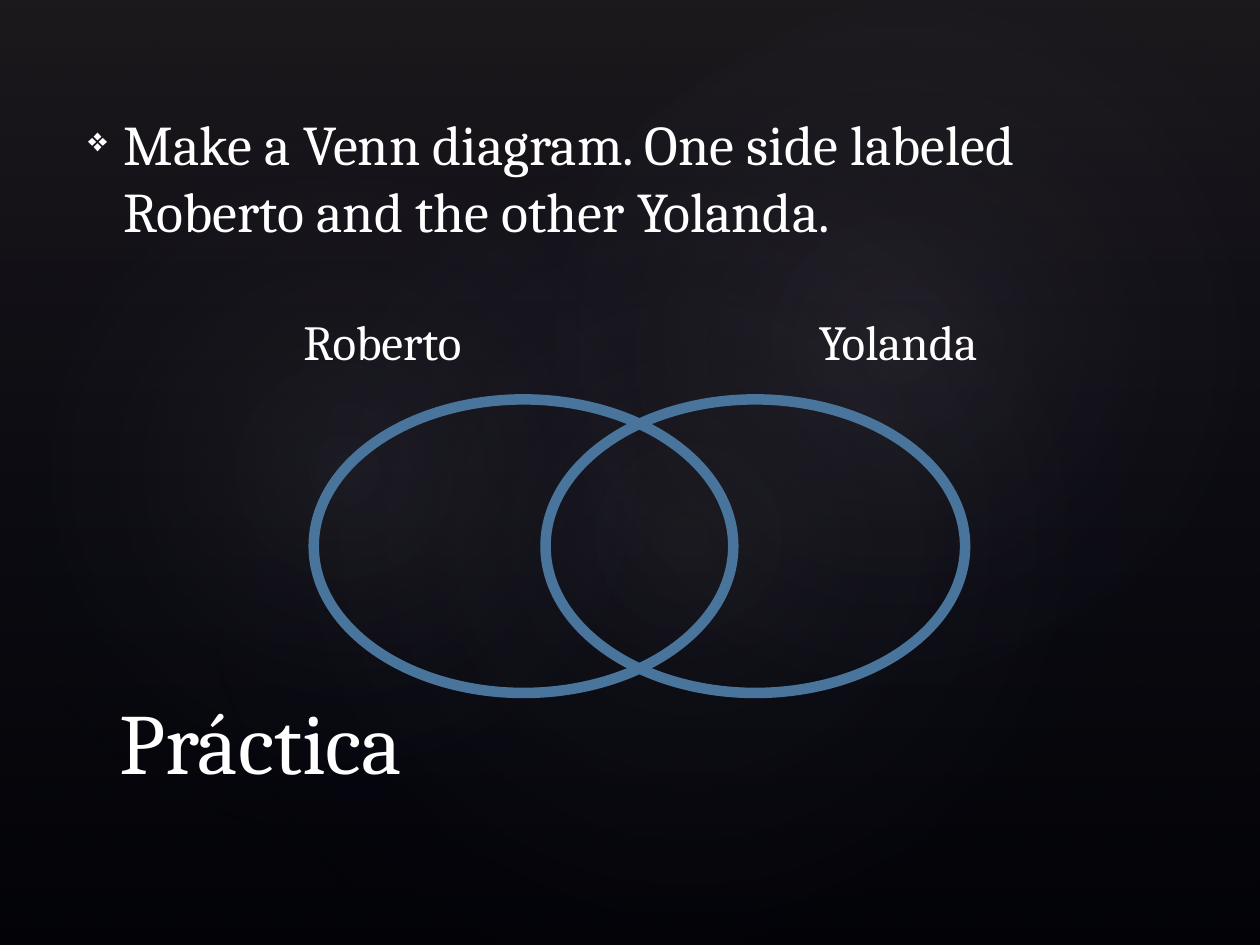
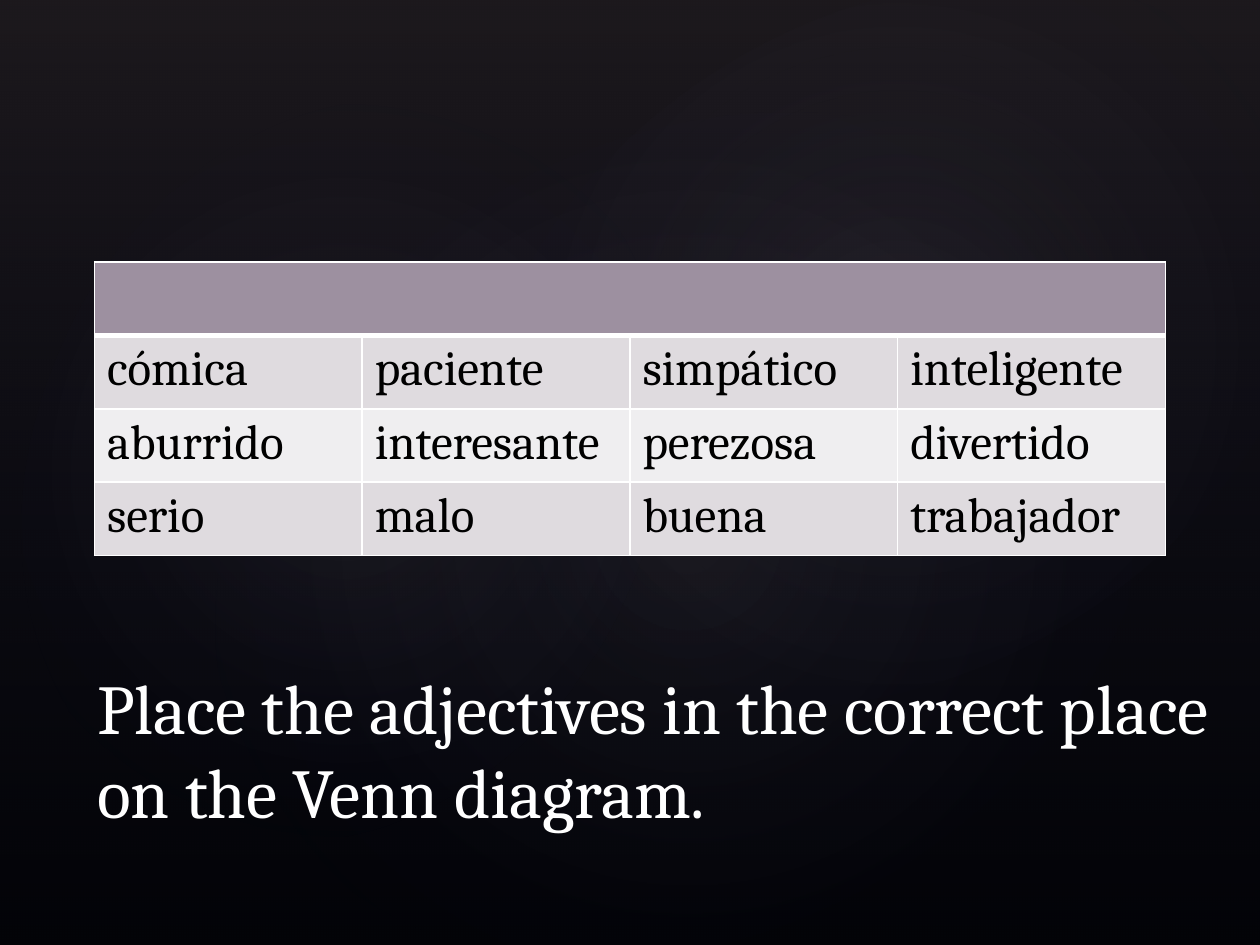
import dataclasses
import itertools

import lxml.etree
import pptx
import pptx.dml.color
import pptx.enum.shapes
import pptx.enum.text
import pptx.oxml.ns
import pptx.util

Inches = pptx.util.Inches
Pt = pptx.util.Pt
qn = pptx.oxml.ns.qn
SHAPES = pptx.enum.shapes.MSO_SHAPE
ANCHOR = pptx.enum.text.MSO_ANCHOR
AUTO_SIZE = pptx.enum.text.MSO_AUTO_SIZE


@dataclasses.dataclass(frozen=True)
class Theme:
    font: str = "Cambria"
    background: str = "000000"
    light_text: str = "FFFFFF"
    dark_text: str = "000000"
    veil_top: str = "504652"
    veil_bottom: str = "242852"
    glow: str = "C4BCC6"
    ring: str = "49749B"
    grid: str = "FFFFFF"
    header: str = "9D90A0"
    bands: tuple = ("DFDBDF", "EFEEF0")
    title_size: int = 49
    long_title_size: int = 40
    body_size: int = 32
    label_size: int = 28


def rgb(value):
    return pptx.dml.color.RGBColor.from_string(value)


def add_xml(parent, tag, **attributes):
    values = {name: str(value) for name, value in attributes.items()}
    return lxml.etree.SubElement(parent, qn(tag), values)


class Deck:
    def __init__(self, theme):
        self.theme = theme
        self.presentation = pptx.Presentation()
        self.presentation.slide_width = Inches(10)
        self.presentation.slide_height = Inches(7.5)
        self.layout = self.presentation.slide_layouts[5]  # title only
        self.slide = None

    # Slides and shared backdrop
    def start_slide(self):
        self.slide = self.presentation.slides.add_slide(self.layout)

    def move_to_layout(self, shape):
        self.layout.element.cSld.spTree.append(shape.element)

    def backdrop(self):
        """Draw the dark veil and the soft glows once, on the layout."""
        theme = self.theme
        fill = self.layout.background.fill
        fill.solid()
        fill.fore_color.rgb = rgb(theme.background)
        veil = self.shape(SHAPES.RECTANGLE, 0, 0, 10, 7.5)
        self.gradient(veil, [(0, theme.veil_top, 36), (100, theme.veil_bottom, 10)])
        self.move_to_layout(veil)
        glows = [
            (1.5, 1.14, 7.92, 6.24, 328.7, 7),
            (-0.3, 1.28, 6.06, 4.9, 294.3, 8),
            (3.58, 0.13, 7.09, 5.2, 328.7, 8),
        ]
        for left, top, width, height, rotation, opacity in glows:
            glow = self.shape(SHAPES.OVAL, left, top, width, height)
            glow.rotation = rotation
            stops = [(0, theme.glow, opacity), (58, theme.veil_bottom, 0)]
            self.gradient(glow, stops, radial=True)
            self.move_to_layout(glow)

    # Shapes
    def shape(self, kind, left, top, width, height):
        shape = self.slide.shapes.add_shape(
            kind, Inches(left), Inches(top), Inches(width), Inches(height))
        shape.shadow.inherit = False
        shape.fill.background()
        shape.line.fill.background()
        return shape

    def gradient(self, shape, stops, radial=False):
        properties = shape.element.spPr
        gradient = lxml.etree.Element(qn("a:gradFill"), rotWithShape="1")
        stop_list = add_xml(gradient, "a:gsLst")
        for position, color, opacity in stops:
            stop = add_xml(stop_list, "a:gs", pos=position * 1000)
            color_element = add_xml(stop, "a:srgbClr", val=color)
            add_xml(color_element, "a:alpha", val=opacity * 1000)
        if radial:
            circle = add_xml(gradient, "a:path", path="circle")
            add_xml(circle, "a:fillToRect", l=50000, t=50000, r=50000, b=50000)
        else:
            add_xml(gradient, "a:lin", ang=90 * 60000, scaled=0)
        properties.replace(properties.find(qn("a:noFill")), gradient)

    def ring(self, left, top, width, height):
        ring = self.shape(SHAPES.OVAL, left, top, width, height)
        ring.line.color.rgb = rgb(self.theme.ring)
        ring.line.width = Pt(6)

    # Text
    def fill_text(self, frame, text, size, color):
        paragraph = frame.paragraphs[0]
        paragraph.alignment = pptx.enum.text.PP_ALIGN.LEFT
        run = paragraph.add_run()
        run.text = text
        run.font.name = self.theme.font
        run.font.size = Pt(size)
        run.font.color.rgb = rgb(color)
        return paragraph

    def title(self, text, size, left, top, width, height):
        title = self.slide.shapes.title
        title.left, title.top = Inches(left), Inches(top)
        title.width, title.height = Inches(width), Inches(height)
        frame = title.text_frame
        frame.word_wrap = True
        frame.auto_size = AUTO_SIZE.NONE
        frame.vertical_anchor = ANCHOR.BOTTOM
        self.fill_text(frame, text, size, self.theme.light_text)

    def text(self, text, size, left, top, width, height):
        box = self.slide.shapes.add_textbox(
            Inches(left), Inches(top), Inches(width), Inches(height))
        frame = box.text_frame
        frame.word_wrap = True
        return frame, self.fill_text(frame, text, size, self.theme.light_text)

    def label(self, text, left, top, width, height):
        frame, _ = self.text(text, self.theme.label_size, left, top, width, height)
        frame.auto_size = AUTO_SIZE.SHAPE_TO_FIT_TEXT

    def bullet(self, text, left, top, width, height):
        frame, paragraph = self.text(text, self.theme.body_size, left, top, width, height)
        frame.vertical_anchor = ANCHOR.MIDDLE
        frame.margin_bottom = Inches(0.58)
        properties = paragraph._p.get_or_add_pPr()
        properties.set("marL", str(Inches(0.3)))
        properties.set("indent", str(Inches(-0.28)))
        add_xml(properties, "a:buSzPct", val=60000)
        add_xml(properties, "a:buChar", char="❖")

    # Table
    def borders(self, cell, top=1, bottom=1):
        properties = cell._tc.get_or_add_tcPr()
        widths = {"a:lnL": 1, "a:lnR": 1, "a:lnT": top, "a:lnB": bottom}
        for position, (tag, width) in enumerate(widths.items()):
            line = lxml.etree.Element(qn(tag), w=str(Pt(width)))
            add_xml(add_xml(line, "a:solidFill"), "a:srgbClr", val=self.theme.grid)
            properties.insert(position, line)

    def word_table(self, rows, left, top, width, height):
        theme = self.theme
        columns = len(rows[0])
        table = self.slide.shapes.add_table(
            len(rows) + 1, columns,
            Inches(left), Inches(top), Inches(width), Inches(height)).table
        for column in range(columns):
            header = table.cell(0, column)
            header.fill.solid()
            header.fill.fore_color.rgb = rgb(theme.header)
            self.borders(header, bottom=3)
        table.cell(0, 0).merge(table.cell(0, columns - 1))
        bands = itertools.cycle(theme.bands)
        for row_number, (words, band) in enumerate(zip(rows, bands), start=1):
            for column, word in enumerate(words):
                cell = table.cell(row_number, column)
                cell.fill.solid()
                cell.fill.fore_color.rgb = rgb(band)
                self.borders(cell, top=3 if row_number == 1 else 1)
                self.fill_text(cell.text_frame, word, theme.label_size, theme.dark_text)


def venn_slide(deck):
    deck.bullet("Make a Venn diagram. One side labeled Roberto and the other Yolanda.",
                0.58, -0.33, 8.92, 4)
    deck.title("Práctica", deck.theme.title_size, 0.85, 5.33, 8.25, 1)
    for ring_left in (2.49, 4.33):
        deck.ring(ring_left, 3.17, 3.33, 2.33)
    for name, label_left in (("Roberto", 2.31), ("Yolanda", 6.4)):
        deck.label(name, label_left, 2.42, 1.85, 0.57)


def adjectives_slide(deck):
    adjectives = [
        ("cómica", "paciente", "simpático", "inteligente"),
        ("aburrido", "interesante", "perezosa", "divertido"),
        ("serio", "malo", "buena", "trabajador"),
    ]
    deck.word_table(adjectives, 0.75, 2.08, 8.5, 2.33)
    deck.title("Place the adjectives in the correct place on the Venn diagram.",
               deck.theme.long_title_size, 0.67, 5.08, 9.42, 1.58)


def main():
    deck = Deck(Theme())
    deck.start_slide()
    deck.backdrop()
    venn_slide(deck)
    deck.start_slide()
    adjectives_slide(deck)
    deck.presentation.save("out.pptx")


if __name__ == "__main__":
    main()
